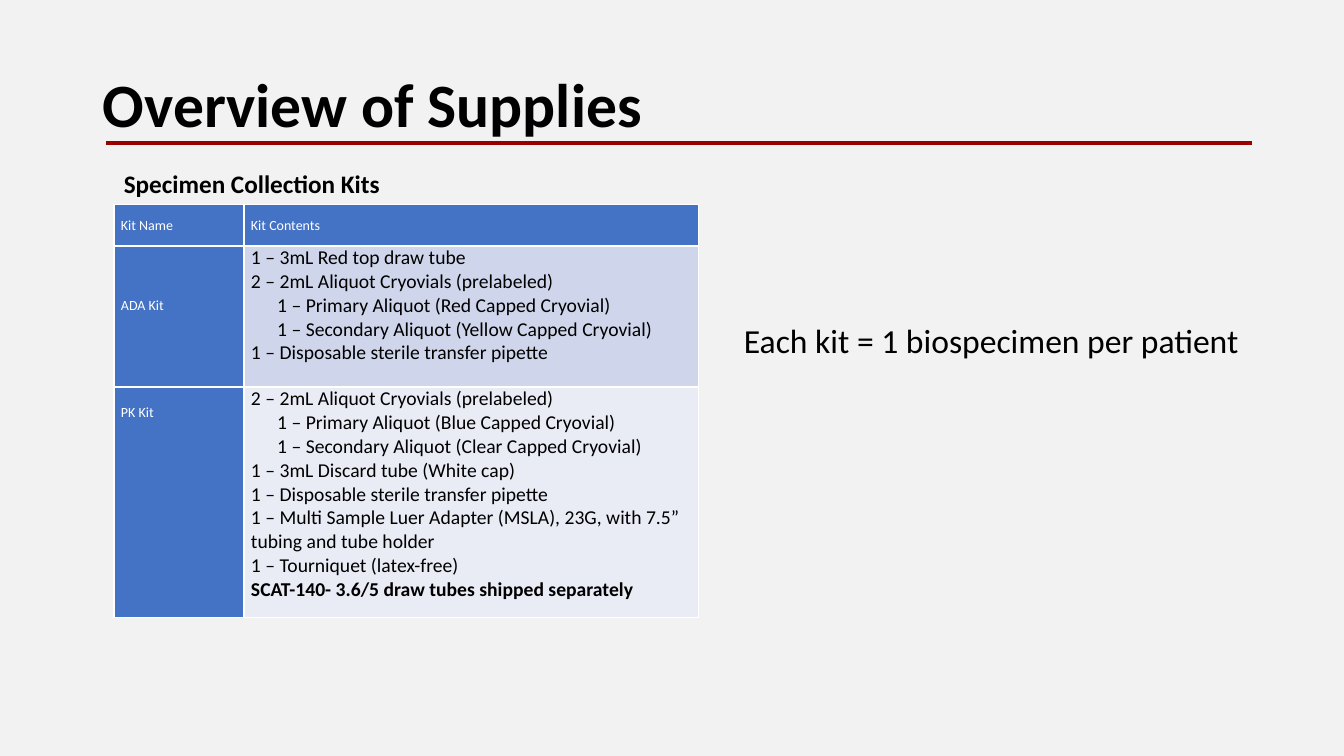
from lxml import etree
from pptx import Presentation
from pptx import util as u
from pptx.dml.color import RGBColor
from pptx.enum import shapes, text
from pptx.oxml import ns

WIDTH, HEIGHT = 13.33, 7.5
FONT = "Calibri"
COLOURS = {"ground": "F2F2F2", "ink": "000000", "white": "FFFFFF", "rule": "9A0000",
           "label": "4472C4", "band": "CFD5EA", "pale": "E9EBF5"}
SUB_INDENT = 0.26
COLUMNS = (1.29, 4.51)
HEADER_HEIGHT = 0.41
HEADINGS = ("Kit Name", "Kit Contents")
KITS = [
    {"name": "ADA Kit", "drop": 0.51, "height": 1.4, "fill": "band", "contents": [
        (0, "1 – 3mL Red top draw tube"),
        (0, "2 – 2mL Aliquot Cryovials (prelabeled)"),
        (1, "1 – Primary Aliquot (Red Capped Cryovial)"),
        (1, "1 – Secondary Aliquot (Yellow Capped Cryovial)"),
        (0, "1 – Disposable sterile transfer pipette")], "note": None},
    {"name": "PK Kit", "drop": 0.17, "height": 2.29, "fill": "pale", "contents": [
        (0, "2 – 2mL Aliquot Cryovials (prelabeled)"),
        (1, "1 – Primary Aliquot (Blue Capped Cryovial)"),
        (1, "1 – Secondary Aliquot (Clear Capped Cryovial)"),
        (0, "1 – 3mL Discard tube (White cap)"),
        (0, "1 – Disposable sterile transfer pipette"),
        (0, "1 – Multi Sample Luer Adapter (MSLA), 23G, with 7.5” tubing and tube holder"),
        (0, "1 – Tourniquet (latex-free)")],
     "note": "SCAT-140- 3.6/5 draw tubes shipped separately"},
]


def rgb(name):
    """Return the named colour."""
    return RGBColor.from_string(COLOURS[name])


def add_run(paragraph, wording, size, colour="ink", bold=False):
    """Add one formatted run to a paragraph."""
    run = paragraph.add_run()
    run.text = wording
    run.font.name, run.font.size, run.font.bold = FONT, u.Pt(size), bold
    run.font.color.rgb = rgb(colour)


def add_title(slide, left, top, width, height):
    """Place the title and the rule beneath it."""
    title = slide.shapes.title
    title.left, title.top = u.Inches(left), u.Inches(top)
    title.width, title.height = u.Inches(width), u.Inches(height)
    frame = title.text_frame
    frame.vertical_anchor = text.MSO_ANCHOR.MIDDLE
    heading = frame.paragraphs[0]
    heading.alignment, heading.line_spacing = text.PP_ALIGN.LEFT, 0.9
    add_run(heading, "Overview of Supplies", 44, bold=True)
    rule_left, rule_top = left + 0.13, u.Inches(top + 0.84)
    rule = slide.shapes.add_connector(shapes.MSO_CONNECTOR.STRAIGHT, u.Inches(rule_left),
                                      rule_top, u.Inches(rule_left + 11.37), rule_top)
    rule.line.color.rgb, rule.line.width = rgb("rule"), u.Pt(3)
    etree.SubElement(rule._element.spPr, ns.qn("a:effectLst"))


def add_caption(slide, left, top, width, height, wording, size, bold=False, wrap=True):
    """Place a line of text in a box."""
    box = slide.shapes.add_textbox(*map(u.Inches, (left, top, width, height)))
    box.text_frame.word_wrap = wrap
    add_run(box.text_frame.paragraphs[0], wording, size, bold=bold)


def style_cell(cell, fill, drop=0):
    """Fill a cell, set its margins and draw its white borders."""
    cell.fill.solid()
    cell.fill.fore_color.rgb = rgb(fill)
    cell.margin_left = cell.margin_right = u.Inches(0.07)
    cell.margin_top, cell.margin_bottom = u.Inches(drop), 0
    properties = cell._tc.get_or_add_tcPr()
    for position, side in enumerate(("lnL", "lnR", "lnT", "lnB")):
        border = etree.Element(ns.qn(f"a:{side}"), w=str(u.Pt(1)))
        paint = etree.SubElement(border, ns.qn("a:solidFill"))
        etree.SubElement(paint, ns.qn("a:srgbClr"), val=COLOURS["white"])
        properties.insert(position, border)


def fill_contents(cell, kit):
    """List the contents of a kit, with the aliquots indented."""
    lines = [(level, wording, False) for level, wording in kit["contents"]]
    if kit["note"]:
        lines.append((0, kit["note"], True))
    for index, (level, wording, bold) in enumerate(lines):
        frame = cell.text_frame
        item = frame.add_paragraph() if index else frame.paragraphs[0]
        if level:
            item._p.get_or_add_pPr().set("marL", str(u.Inches(SUB_INDENT * level)))
        add_run(item, wording, 14, bold=bold)


def add_kit_table(slide, left, top):
    """Place the table of kits and their contents."""
    heights = [HEADER_HEIGHT] + [kit["height"] for kit in KITS]
    table = slide.shapes.add_table(len(heights), len(COLUMNS), u.Inches(left), u.Inches(top),
                                   u.Inches(sum(COLUMNS)), u.Inches(sum(heights))).table
    for column, width in zip(table.columns, COLUMNS):
        column.width = u.Inches(width)
    for row, height in zip(table.rows, heights):
        row.height = u.Inches(height)
    for cell, heading in zip(table.rows[0].cells, HEADINGS):
        style_cell(cell, "label")
        cell.vertical_anchor = text.MSO_ANCHOR.MIDDLE
        add_run(cell.text_frame.paragraphs[0], heading, 10, "white")
    for number, kit in enumerate(KITS, 1):
        name, contents = table.cell(number, 0), table.cell(number, 1)
        style_cell(name, "label", kit["drop"])
        add_run(name.text_frame.paragraphs[0], kit["name"], 10, "white")
        style_cell(contents, kit["fill"])
        fill_contents(contents, kit)


def main():
    """Build and save the supplies slide."""
    deck = Presentation()
    deck.slide_width, deck.slide_height = u.Inches(WIDTH), u.Inches(HEIGHT)
    slide = deck.slides.add_slide(deck.slide_layouts[5])
    slide.background.fill.solid()
    slide.background.fill.fore_color.rgb = rgb("ground")
    add_title(slide, 0.92, 0.58, 10.96, 0.98)
    add_kit_table(slide, 1.13, 2.03)
    add_caption(slide, 1.13, 1.62, 2.95, 0.4, "Specimen Collection Kits", 18, bold=True, wrap=False)
    add_caption(slide, 7.28, 3.12, 5.13, 0.5, "Each kit = 1 biospecimen per patient", 24)
    deck.save("out.pptx")


if __name__ == "__main__":
    main()
